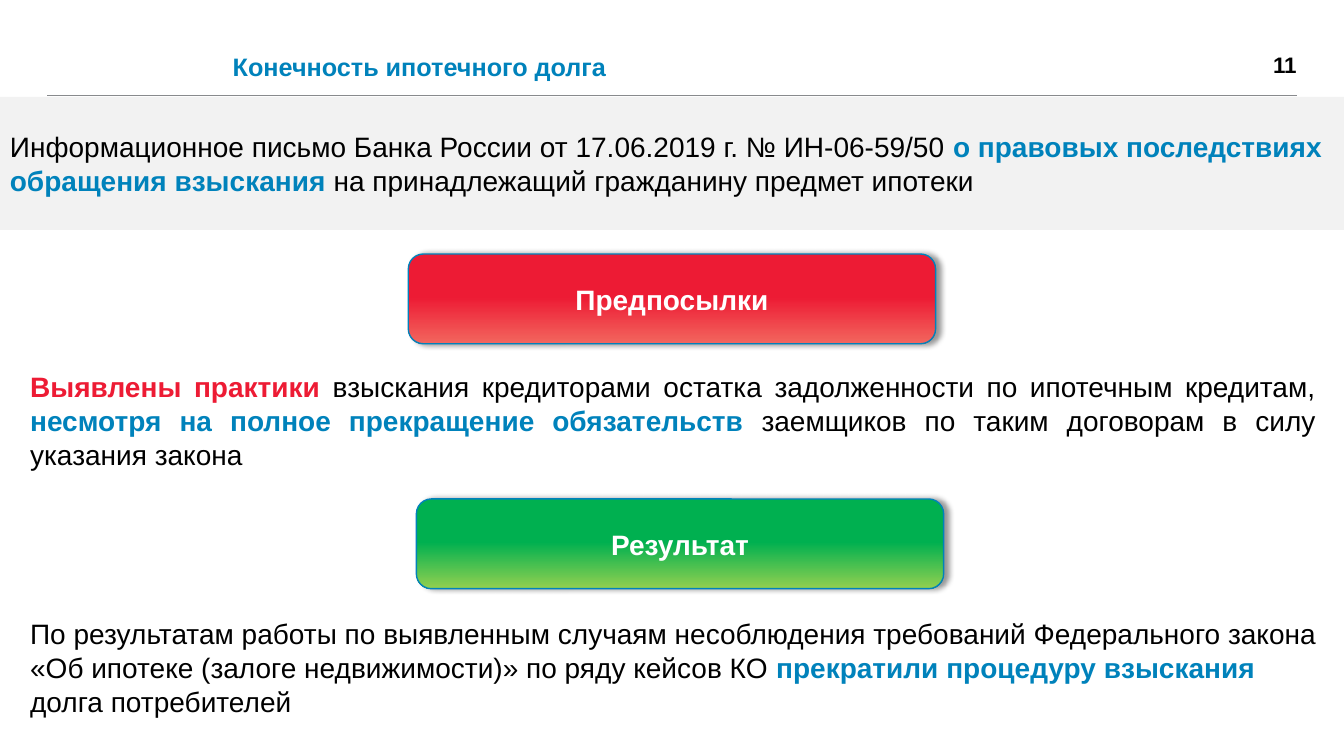
from lxml.etree import SubElement
from pptx import Presentation
from pptx.dml.color import RGBColor
from pptx.enum.shapes import MSO_CONNECTOR, MSO_SHAPE
from pptx.enum.text import MSO_ANCHOR, PP_ALIGN
from pptx.oxml.ns import qn
from pptx.util import Inches, Pt

WIDTH, HEIGHT = 13.33, 7.5
BLACK, BLUE, RED, WHITE = "000000", "0082BB", "ED1B34", "FFFFFF"
GREY, RULE = "F2F2F2", "888A8D"
MARGIN = 0.47
RULE_TOP = 0.95
BUTTON_SIZE = (5.23, 0.89)

TITLE = [("Конечность ипотечного долга", BLUE, True)]
NUMBER = [("11", BLACK, True)]
LETTER = [
    ("Информационное письмо Банка России от 17.06.2019 г. № ИН-06-59/50 ", BLACK, False),
    ("о правовых последствиях обращения взыскания ", BLUE, True),
    ("на принадлежащий гражданину предмет ипотеки", BLACK, False),
]
SECTIONS = [
    {
        "label": "Предпосылки", "button": (4.05, 2.52), "colours": (RED, "F2665E"),
        "area": (0.2, 3.62, 12.95, 1.11), "align": PP_ALIGN.JUSTIFY,
        "text": [
            ("Выявлены практики", RED, True),
            (" взыскания кредиторами остатка задолженности по ипотечным кредитам, ", BLACK, False),
            ("несмотря на полное прекращение обязательств", BLUE, True),
            (" заемщиков по таким договорам в силу указания закона", BLACK, False),
        ],
    },
    {
        "label": "Результат", "button": (4.13, 4.95), "colours": ("00B050", "92D050"),
        "area": (0.2, 6.07, 13.09, 1.11), "align": PP_ALIGN.LEFT,
        "text": [
            ("По результатам работы по выявленным случаям несоблюдения требований "
             "Федерального закона «Об ипотеке (залоге недвижимости)» по ряду кейсов КО ", BLACK, False),
            ("прекратили процедуру взыскания", BLUE, True),
            (" долга потребителей", BLACK, False),
        ],
    },
]


def colour(value):
    """Turn a hex string into a colour."""
    return RGBColor.from_string(value)


def write(box, spans, size=20, align=PP_ALIGN.LEFT, anchor=MSO_ANCHOR.TOP):
    """Fill a box with one paragraph of coloured spans."""
    frame = box.text_frame
    frame.word_wrap = True
    frame.vertical_anchor = anchor
    para = frame.paragraphs[0]
    para.alignment = align
    for text, shade, bold in spans:
        span = para.add_run()
        span.text = text
        span.font.name = "Arial"
        span.font.size = Pt(size)
        span.font.bold = bold
        span.font.color.rgb = colour(shade)


def add_text(page, area, spans, **style):
    """Add a text box."""
    box = page.shapes.add_textbox(*map(Inches, area))
    write(box, spans, **style)
    return box


def add_rule(page):
    """Draw the thin line under the heading."""
    ends = (MARGIN, RULE_TOP, WIDTH - MARGIN, RULE_TOP)
    rule = page.shapes.add_connector(MSO_CONNECTOR.STRAIGHT, *map(Inches, ends))
    rule.line.color.rgb = colour(RULE)
    rule.line.width = Pt(0.5)
    SubElement(rule.element.spPr, qn("a:effectLst"))


def add_band(page):
    """Add the grey band with the letter's subject."""
    area = (0, 0.96, WIDTH, 1.32)
    band = page.shapes.add_shape(MSO_SHAPE.RECTANGLE, *map(Inches, area))
    band.shadow.inherit = False
    band.fill.solid()
    band.fill.fore_color.rgb = colour(GREY)
    band.line.fill.background()
    write(band, LETTER, anchor=MSO_ANCHOR.MIDDLE)


def add_button(page, place, label, colours):
    """Add a rounded gradient button with a soft shadow."""
    button = page.shapes.add_shape(
        MSO_SHAPE.ROUNDED_RECTANGLE, *map(Inches, place + BUTTON_SIZE))
    button.fill.gradient()
    button.fill.gradient_angle = 270
    for stop, position, shade in zip(button.fill.gradient_stops, (0.48, 1), colours):
        stop.position = position
        stop.color.rgb = colour(shade)
    button.line.color.rgb = colour(BLUE)
    button.line.width = Pt(1)
    button.shadow.inherit = False
    effects = button.element.spPr.find(qn("a:effectLst"))
    shadow = SubElement(effects, qn("a:outerShdw"), blurRad=str(Pt(4)),
                        dist=str(Pt(3)), dir="0", algn="l", rotWithShape="0")
    shade = SubElement(shadow, qn("a:srgbClr"), val=BLACK)
    SubElement(shade, qn("a:alpha"), val="40000")
    write(button, [(label, WHITE, True)], align=PP_ALIGN.CENTER, anchor=MSO_ANCHOR.MIDDLE)


def main():
    """Build and save the slide."""
    deck = Presentation()
    deck.slide_width, deck.slide_height = Inches(WIDTH), Inches(HEIGHT)
    page = deck.slides.add_slide(deck.slide_layouts[6])
    add_rule(page)
    for section in SECTIONS:
        add_button(page, section["button"], section["label"], section["colours"])
        add_text(page, section["area"], section["text"], align=section["align"])
    number = add_text(page, (12.05, 0.47, 0.81, 0.35), NUMBER, size=16,
                      align=PP_ALIGN.RIGHT, anchor=MSO_ANCHOR.MIDDLE)
    frame = number.text_frame
    frame.margin_left = frame.margin_right = frame.margin_top = frame.margin_bottom = 0
    add_band(page)
    add_text(page, (2.21, 0.46, 9.23, 0.35), TITLE, size=18)
    deck.save("out.pptx")


if __name__ == "__main__":
    main()
